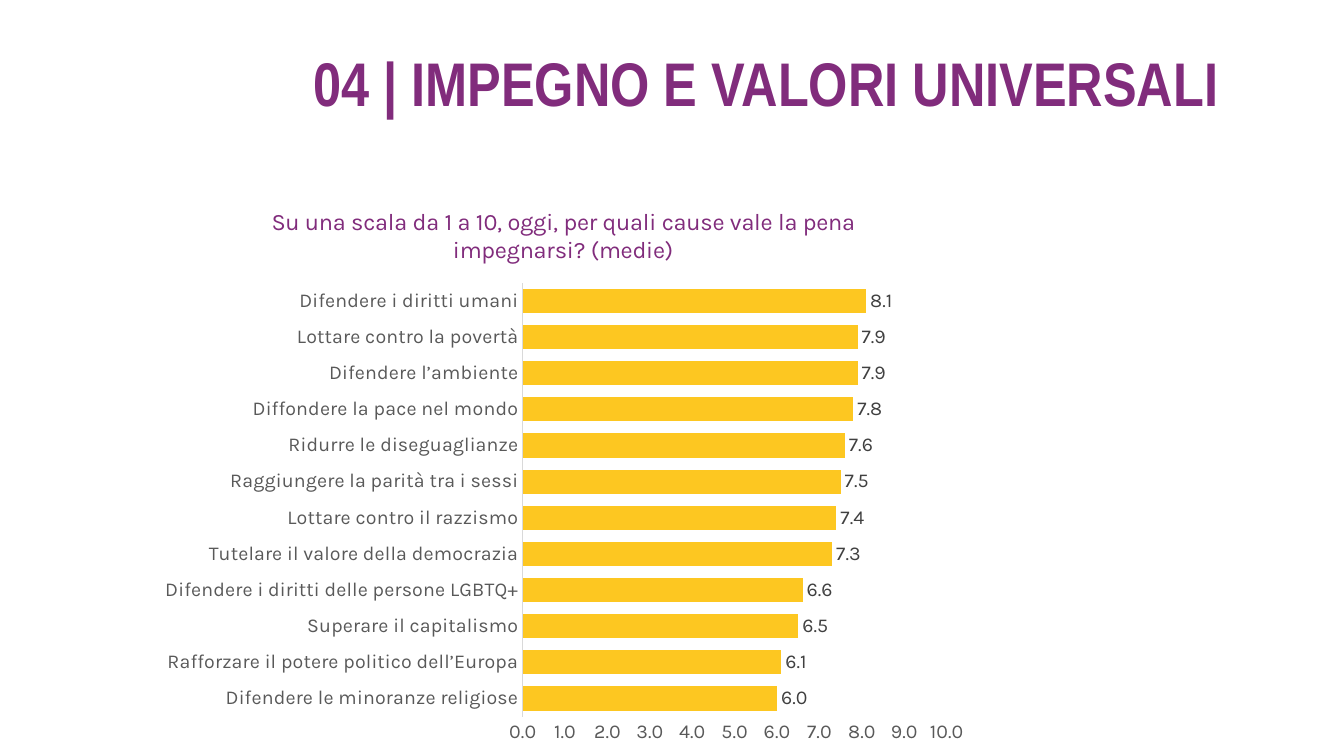
from lxml.etree import SubElement
from pptx import Presentation
from pptx.chart.data import CategoryChartData
from pptx.dml.color import RGBColor
from pptx.enum.chart import XL_CHART_TYPE, XL_LABEL_POSITION, XL_TICK_MARK
from pptx.enum.text import MSO_ANCHOR, MSO_AUTO_SIZE, PP_ALIGN
from pptx.oxml.ns import qn
from pptx.util import Emu, Pt

PURPLE, YELLOW = "812C7C", "FDC721"
GREY, DARK_GREY, LIGHT_GREY = "595959", "404040", "D9D9D9"
CHART_FONT = "Karla"

# Causes with their mean score, from the bottom bar to the top one
CAUSES = [
    ("Difendere le minoranze religiose", 6.0),
    ("Rafforzare il potere politico dell’Europa", 6.1),
    ("Superare il capitalismo", 6.5),
    ("Difendere i diritti delle persone LGBTQ+", 6.6),
    ("Tutelare il valore della democrazia", 7.3),
    ("Lottare contro il razzismo", 7.4),
    ("Raggiungere la parità tra i sessi", 7.5),
    ("Ridurre le diseguaglianze", 7.6),
    ("Diffondere la pace nel mondo", 7.8),
    ("Difendere l’ambiente", 7.9),
    ("Lottare contro la povertà", 7.9),
    ("Difendere i diritti umani", 8.1),
]


def px(length):
    return Emu(round(length * 914400 / 100.8))


def color(hex_code):
    return RGBColor.from_string(hex_code)


def format_font(font, name, size, hex_code, bold=False):
    font.name, font.size, font.bold = name, Pt(size), bold
    font.color.rgb = color(hex_code)


def set_layout(parent, **fractions):
    """Place a chart part by fractions of the chart area."""
    layout = parent.find(qn("c:layout"))
    manual = SubElement(layout, qn("c:manualLayout"))
    if "w" in fractions:
        SubElement(manual, qn("c:layoutTarget")).set("val", "inner")
    for side in ("x", "y"):
        SubElement(manual, qn(f"c:{side}Mode")).set("val", "edge")
    for key, value in fractions.items():
        SubElement(manual, qn(f"c:{key}")).set("val", str(value))


def add_title(slide, left, top, width, height):
    title = slide.shapes.title
    title.left, title.top = px(left), px(top)
    title.width, title.height = px(width), px(height)
    frame = title.text_frame
    frame.word_wrap = True
    frame.auto_size = MSO_AUTO_SIZE.NONE
    frame.vertical_anchor = MSO_ANCHOR.MIDDLE
    paragraph = frame.paragraphs[0]
    paragraph.alignment = PP_ALIGN.LEFT
    paragraph.line_spacing = 0.9
    run = paragraph.add_run()
    run.text = "04 | IMPEGNO E VALORI UNIVERSALI"
    format_font(run.font, "Arial Narrow", 44, PURPLE, bold=True)


def add_causes_chart(slide, left, top, width, height):
    data = CategoryChartData(number_format="0.0")
    data.categories = [cause for cause, _ in CAUSES]
    data.add_series("Series 1", [score for _, score in CAUSES])
    chart = slide.shapes.add_chart(
        XL_CHART_TYPE.BAR_CLUSTERED, px(left), px(top), px(width), px(height), data
    ).chart
    format_font(chart.font, CHART_FONT, 14, GREY)
    chart.has_legend = False

    # Question above the bars
    chart.has_title = True
    chart.chart_title.include_in_layout = False
    run = chart.chart_title.text_frame.paragraphs[0].add_run()
    run.text = "Su una scala da 1 a 10, oggi, per quali cause vale la pena impegnarsi? (medie)"
    format_font(run.font, CHART_FONT, 16.8, PURPLE)

    # Axes
    for axis in (chart.category_axis, chart.value_axis):
        axis.has_major_gridlines = False
        axis.major_tick_mark = axis.minor_tick_mark = XL_TICK_MARK.NONE
        format_font(axis.tick_labels.font, CHART_FONT, 14, GREY)
    category_line = chart.category_axis.format.line
    category_line.color.rgb = color(LIGHT_GREY)
    category_line.width = Pt(0.75)
    scores = chart.value_axis
    scores.minimum_scale, scores.maximum_scale, scores.major_unit = 0, 10, 1
    scores.tick_labels.number_format = "0.0"
    scores.tick_labels.number_format_is_linked = False
    scores.format.line.fill.background()

    # Bars and their values
    plot = chart.plots[0]
    plot.gap_width = 50
    plot.vary_by_categories = False
    bars = plot.series[0]
    bars.format.fill.solid()
    bars.format.fill.fore_color.rgb = color(YELLOW)
    labels = bars.data_labels
    labels.show_value = True
    labels.position = XL_LABEL_POSITION.OUTSIDE_END
    labels.number_format = "0.0"
    labels.number_format_is_linked = False
    format_font(labels.font, CHART_FONT, 14, DARK_GREY)

    plot_area = plot._element.getparent()
    if plot_area.find(qn("c:layout")) is None:
        plot_area.insert(0, plot_area.makeelement(qn("c:layout")))
    set_layout(plot_area, x=0.452, y=0.17, w=0.506, h=0.761)


def main():
    presentation = Presentation()
    presentation.slide_width, presentation.slide_height = px(1344), px(756)
    slide = presentation.slides.add_slide(presentation.slide_layouts[5])
    add_title(slide, 303, 41, 1017, 92)
    add_causes_chart(slide, 144, 186, 838, 570)
    presentation.save("out.pptx")


if __name__ == "__main__":
    main()
